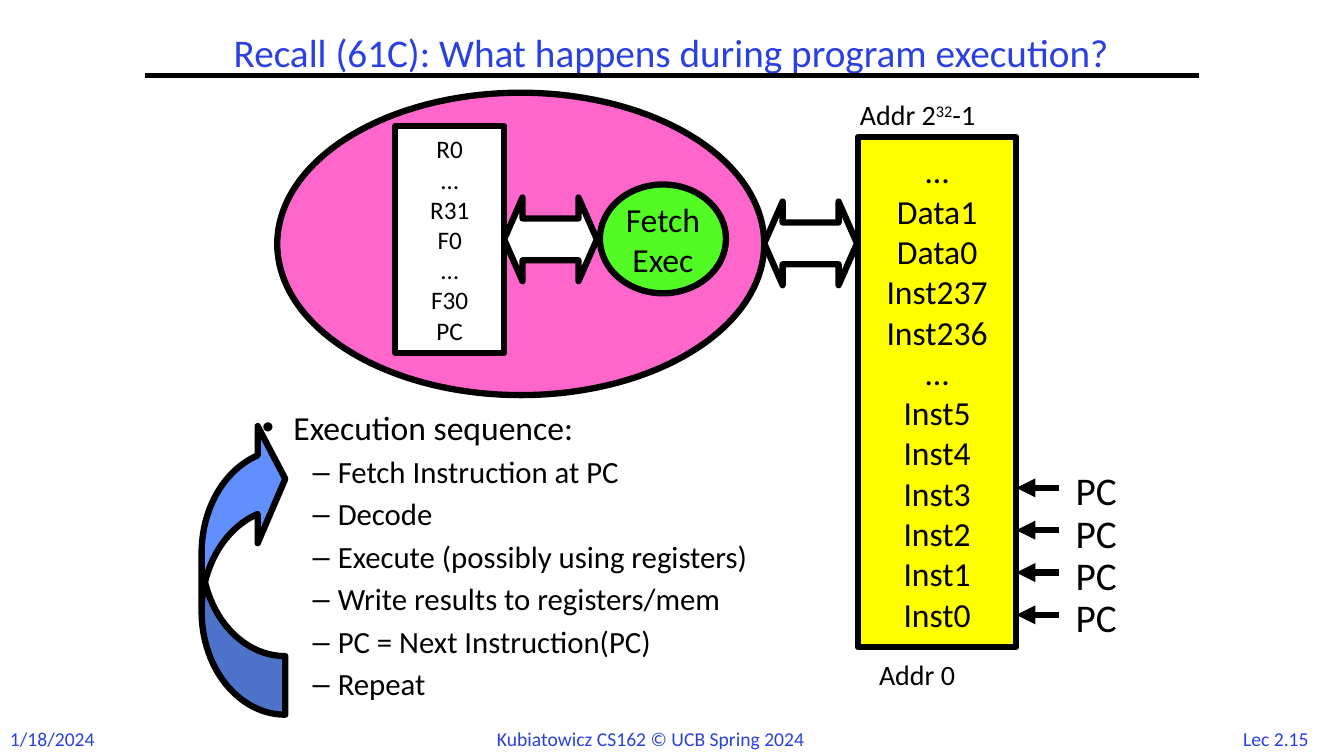
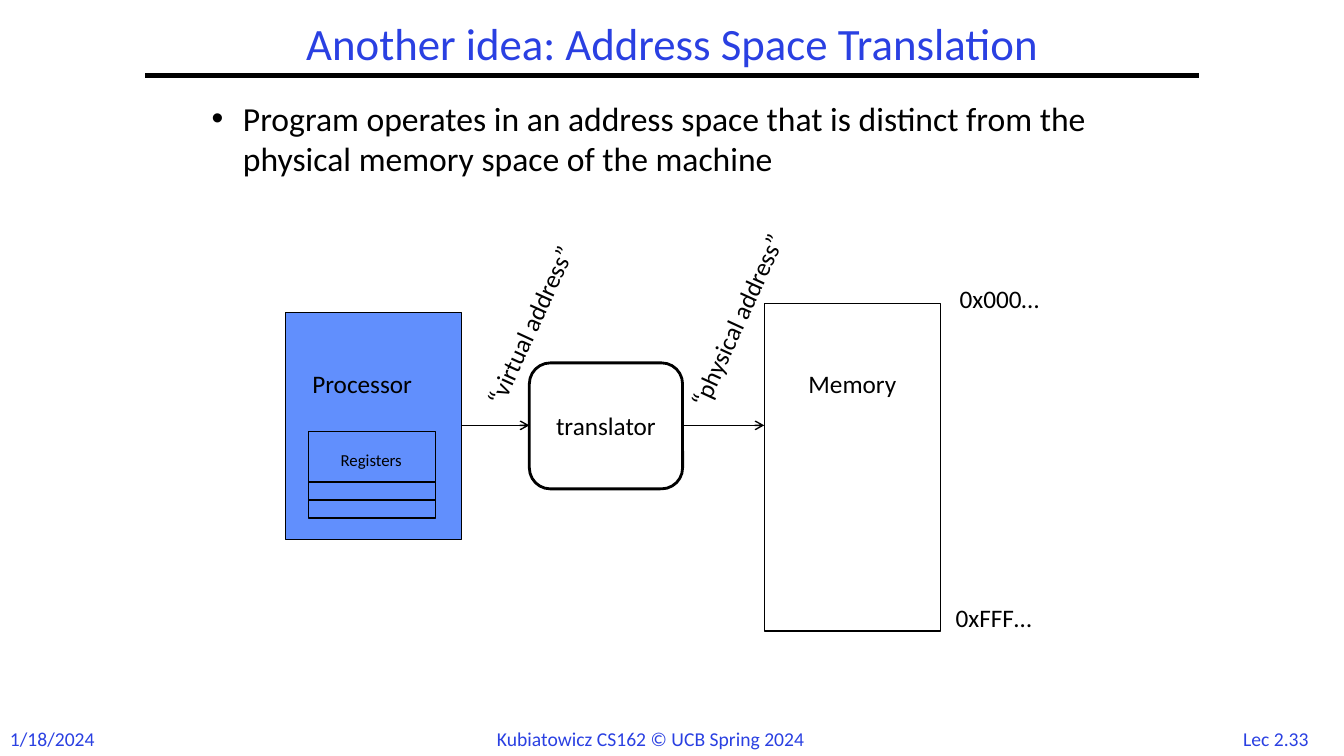
from pptx import Presentation
from pptx.dml.color import RGBColor
from pptx.enum import shapes, text
from pptx.oxml import ns, xmlchemy
from pptx import util as u

FONT = "Calibri"
BLUE = RGBColor(0x2A, 0x40, 0xE2)
SKY = RGBColor(0x61, 0x8F, 0xFD)
PINK = RGBColor(0xFF, 0x66, 0xCC)
GREEN = RGBColor(0x53, 0xFB, 0x25)
YELLOW = RGBColor(0xFF, 0xFF, 0x00)
WHITE = RGBColor(0xFF, 0xFF, 0xFF)
BLACK = RGBColor(0x00, 0x00, 0x00)

KIND = shapes.MSO_SHAPE
CENTER = text.PP_ALIGN.CENTER
MIDDLE = text.MSO_ANCHOR.MIDDLE

# Left margin, hanging indent and type size of each list level
LIST_LEVELS = [(0.31, 0.31, 24), (0.75, 0.25, 22)]


# Text and shape helpers

def inches(*lengths):
    return [u.Inches(length) for length in lengths]


def format_text(frame, size, color=BLACK, align=None):
    for para in frame.paragraphs:
        para.alignment = align
        for span in para.runs:
            span.font.name = FONT
            span.font.size = u.Pt(size)
            span.font.color.rgb = color


def add_label(page, place, words, size, color=BLACK, align=None, rotation=0):
    box = page.shapes.add_textbox(*inches(*place))
    box.rotation = rotation
    frame = box.text_frame
    frame.text = words
    frame.word_wrap = False
    frame.auto_size = text.MSO_AUTO_SIZE.SHAPE_TO_FIT_TEXT
    format_text(frame, size, color, align)
    return box


def add_block(page, kind, place, fill=None, weight=4.5, words="", size=18,
              adjust=()):
    block = page.shapes.add_shape(kind, *inches(*place))
    block.shadow.inherit = False
    for index, value in enumerate(adjust):
        block.adjustments[index] = value
    if fill is None:
        block.fill.background()
    else:
        block.fill.solid()
        block.fill.fore_color.rgb = fill
    block.line.color.rgb = BLACK
    block.line.width = u.Pt(weight)
    if words:
        frame = block.text_frame
        frame.text = words
        frame.word_wrap = False
        frame.vertical_anchor = MIDDLE
        format_text(frame, size, align=CENTER)
    return block


def add_line(page, start, end, weight, head=None):
    line = page.shapes.add_connector(shapes.MSO_CONNECTOR.STRAIGHT,
                                     *inches(*start, *end))
    line.line.color.rgb = BLACK
    line.line.width = u.Pt(weight)
    if head:
        tail_end = xmlchemy.OxmlElement("a:tailEnd")
        tail_end.set("type", head)
        line.line._get_or_add_ln().append(tail_end)
    line._element.spPr.append(xmlchemy.OxmlElement("a:effectLst"))


def add_double_arrow(page, left, top):
    add_block(page, KIND.LEFT_RIGHT_ARROW, (left, top, 0.92, 0.83), WHITE,
              adjust=(0.5, 0.22))


# Placeholders and shared frame

def move(holder, place):
    holder.left, holder.top, holder.width, holder.height = inches(*place)
    holder.text_frame.auto_size = text.MSO_AUTO_SIZE.NONE


def fill_title(page, place, words, size):
    title = page.shapes.title
    move(title, place)
    frame = title.text_frame
    frame.text = words
    frame.vertical_anchor = MIDDLE
    frame.paragraphs[0].line_spacing = 0.9
    format_text(frame, size, BLUE, CENTER)


def fill_list(page, place, items, spacing):
    body = page.placeholders[1]
    move(body, place)
    frame = body.text_frame
    frame.text = "\n".join(words for level, words in items)
    format_text(frame, LIST_LEVELS[0][2])
    for para, (level, words) in zip(frame.paragraphs, items):
        margin, hanging, size = LIST_LEVELS[level]
        para.level = level
        para.line_spacing = spacing
        para.space_before = u.Pt(round(size * 0.3, 1))
        para.font.size = para.runs[0].font.size = u.Pt(size)
        properties = para._p.get_or_add_pPr()
        properties.set("marL", str(u.Inches(margin)))
        properties.set("indent", str(-u.Inches(hanging)))


def add_page(deck, number):
    page = deck.slides.add_slide(deck.slide_layouts[1])
    add_line(page, (1.44, 0.75), (11.89, 0.75), 3)
    add_label(page, (0, 7.16, 1.07, 0.34), "1/18/2024", 14, BLUE)
    add_label(page, (4.83, 7.16, 3.68, 0.34),
              "Kubiatowicz CS162 © UCB Spring 2024", 14, BLUE)
    add_label(page, (12.17, 7.16, 0.97, 0.33), number, 14, BLUE, CENTER)
    return page


# Slides

def build_execution(deck):
    page = add_page(deck, "Lec 2.15")
    fill_title(page, (1.67, 0.25, 9.97, 0.58),
               "Recall (61C): What happens during program execution?", 28)
    steps = ["Fetch Instruction at PC", "Decode",
             "Execute (possibly using registers)",
             "Write results to registers/mem",
             "PC = Next Instruction(PC)", "Repeat"]
    fill_list(page, (2.5, 4.03, 6.25, 3.25),
              [(0, "Execution sequence:")] + [(1, step) for step in steps],
              0.9)

    # Processor
    add_block(page, KIND.OVAL, (2.75, 0.92, 4.83, 3), PINK)
    add_block(page, KIND.OVAL, (5.95, 1.83, 1.25, 1.08), GREEN,
              words="Fetch\nExec", size=24)
    add_double_arrow(page, 5, 1.96)
    add_block(page, KIND.RECTANGLE, (3.92, 1.25, 1.08, 2.25), WHITE,
              words="R0\n…\nR31\nF0\n…\nF30\nPC")

    # Memory
    add_double_arrow(page, 7.58, 2)
    cells = ["…", "Data1", "Data0", "Inst237", "Inst236", "…"]
    cells += [f"Inst{index}" for index in range(5, -1, -1)]
    add_block(page, KIND.RECTANGLE, (8.51, 1.36, 1.57, 5.06), YELLOW,
              words="\n".join(cells), size=24)
    add_label(page, (8.62, 6.47, 1.03, 0.44), "Addr 0", 20)
    top_address = add_label(page, (8.43, 0.92, 1.48, 0.44), "Addr 2", 20)
    para = top_address.text_frame.paragraphs[0]
    for words in ("32", "-1"):
        para.add_run().text = words
    format_text(top_address.text_frame, 20)
    para.runs[1].font._element.set("baseline", "30000")

    # Program counter positions
    for row in range(4):
        top = 4.58 + 0.42 * row
        add_label(page, (10.57, top, 0.75, 0.57), "PC", 28)
        add_line(page, (10.5, top + 0.26), (10.08, top + 0.26), 4.5,
                 "triangle")

    # Loop back to the first step
    loop = add_block(page, KIND.CURVED_RIGHT_ARROW, (2, 4.17, 0.83, 2.92),
                     SKY, adjust=(0.7, 1.4, 0.33))
    loop._element.spPr.find(ns.qn("a:xfrm")).set("flipV", "1")


def build_translation(deck):
    page = add_page(deck, "Lec 2.33")
    fill_title(page, (2.42, 0.17, 8.5, 0.58),
               "Another idea: Address Space Translation", 32)
    fill_list(page, (2, 0.92, 9.42, 1.5),
              [(0, "Program operates in an address space that is distinct "
                   "from the physical memory space of the machine")], 1.0)

    # Memory, processor with registers, translator
    add_block(page, KIND.RECTANGLE, (7.58, 3.01, 1.75, 3.25), weight=1)
    add_block(page, KIND.RECTANGLE, (2.83, 3.1, 1.75, 2.25), SKY, 1)
    for top, height in ((4.28, 0.86), (4.78, 0.18)):
        add_block(page, KIND.RECTANGLE, (3.06, top, 1.26, height), weight=1)
    add_block(page, KIND.FLOWCHART_ALTERNATE_PROCESS,
              (5.25, 3.6, 1.52, 1.25), WHITE, 2, "translator")

    # Address flow
    for start, end in ((4.58, 5.25), (6.77, 7.58)):
        add_line(page, (start, 4.22), (end, 4.22), 1, "arrow")

    # Labels
    for left, top, width, words in (
            (3, 3.6, 1.34, "Processor"), (7.92, 3.6, 1.11, "Memory"),
            (9.42, 2.76, 1.14, "0x000…"), (9.38, 5.93, 1.18, "0xFFF…")):
        add_label(page, (left, top, width, 0.4), words, 18)
    for left, top, width, words in (
            (4.27, 2.98, 2.01, "“virtual address”"),
            (6.22, 2.89, 2.25, "“physical address”")):
        add_label(page, (left, top, width, 0.4), words, 18, rotation=294.7)
    add_label(page, (3.28, 4.41, 0.91, 0.3), "Registers", 12)


def main():
    deck = Presentation()
    deck.slide_width, deck.slide_height = inches(13.33, 7.5)
    build_execution(deck)
    build_translation(deck)
    deck.save("out.pptx")


if __name__ == "__main__":
    main()
